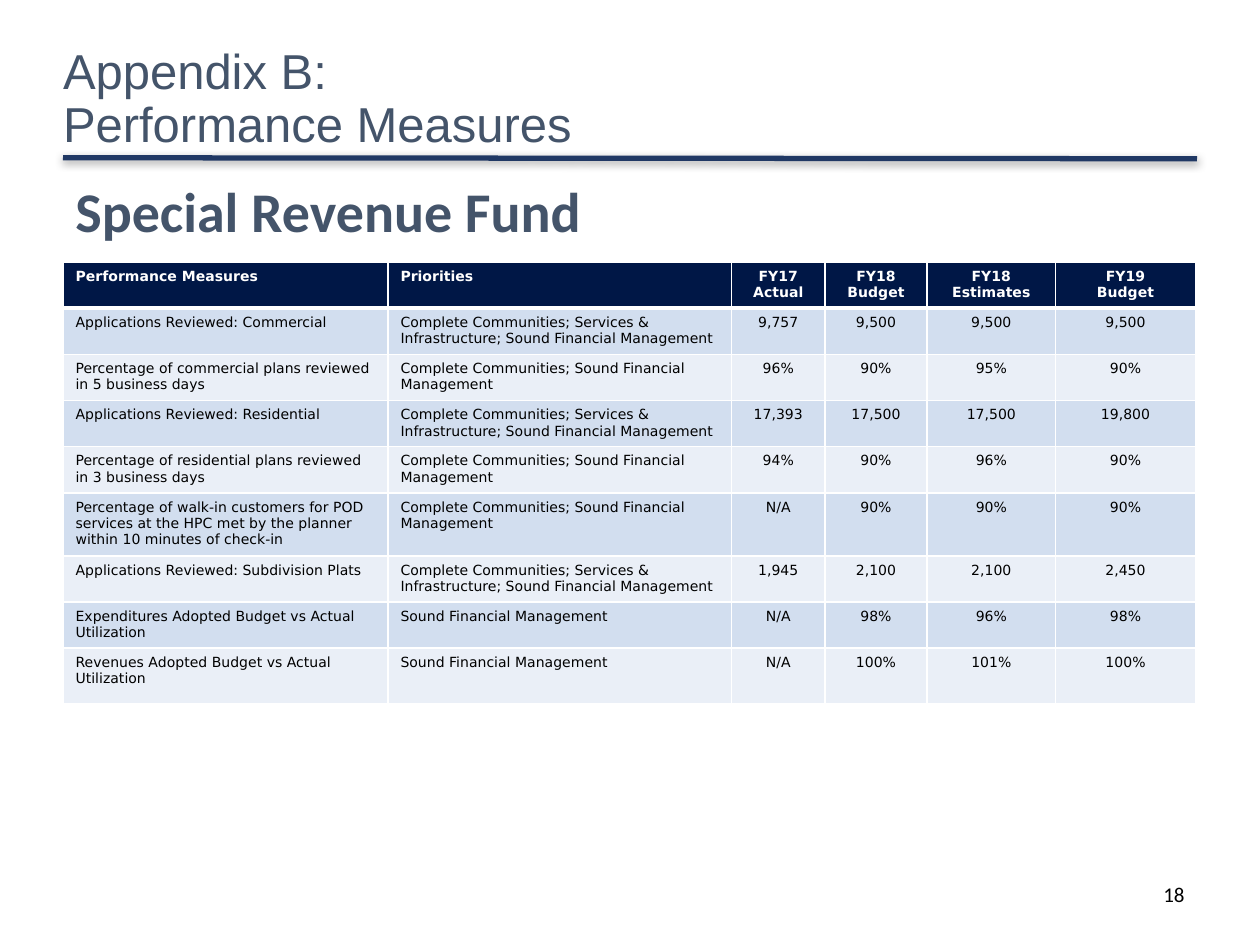
import pptx
import pptx.dml.color
import pptx.enum.shapes
import pptx.enum.text
import pptx.oxml
import pptx.oxml.ns
import pptx.util
from pptx.util import Cm

ALIGN = pptx.enum.text.PP_ALIGN
ANCHOR = pptx.enum.text.MSO_ANCHOR
NAVY, SLATE, WHITE, BLACK = "001746", "44546A", "FFFFFF", "000000"
BANDS = ("D2DEEF", "EAEFF7")
MARGIN, CONTENT_WIDTH = 1.27, 22.86

COLUMN_WIDTHS = (6.55, 6.93, 1.88, 2.06, 2.59, 2.82)
ROW_HEIGHTS = (0.91,) * 5 + (1.24,) + (0.91,) * 2 + (1.12,)
SOUND = "Sound Financial Management"
COMPLETE = "Complete Communities; " + SOUND
SERVICES = "Complete Communities; Services & Infrastructure; " + SOUND
MEASURES = (
    ("Performance Measures", "Priorities", "FY17\nActual", "FY18\nBudget", "FY18\nEstimates", "FY19\nBudget"),
    ("Applications Reviewed: Commercial", SERVICES, "9,757", "9,500", "9,500", "9,500"),
    ("Percentage of commercial plans reviewed in 5 business days", COMPLETE, "96%", "90%", "95%", "90%"),
    ("Applications Reviewed: Residential", SERVICES, "17,393", "17,500", "17,500", "19,800"),
    ("Percentage of residential plans reviewed in 3 business days", COMPLETE, "94%", "90%", "96%", "90%"),
    ("Percentage of walk-in customers for POD services at the HPC met by the planner within 10 minutes of check-in",
     COMPLETE, "N/A", "90%", "90%", "90%"),
    ("Applications Reviewed: Subdivision Plats", SERVICES, "1,945", "2,100", "2,100", "2,450"),
    ("Expenditures Adopted Budget vs Actual Utilization", SOUND, "N/A", "98%", "96%", "98%"),
    ("Revenues Adopted Budget vs Actual Utilization", SOUND, "N/A", "100%", "101%", "100%"),
)


def color(value):
    return pptx.dml.color.RGBColor.from_string(value)


def write_text(frame, text, font, size, fill, bold=False, align=ALIGN.LEFT, spacing=None):
    frame.text = text
    for paragraph in frame.paragraphs:
        paragraph.alignment = align
        if spacing:
            paragraph.line_spacing = spacing
        for run in paragraph.runs:
            run.font.name = font
            run.font.size = pptx.util.Pt(size)
            run.font.bold = bold
            run.font.color.rgb = color(fill)


def add_text(slide, left, top, width, height, text, wrap=True, **text_format):
    shape = slide.shapes.add_textbox(Cm(left), Cm(top), Cm(width), Cm(height))
    shape.text_frame.word_wrap = wrap
    write_text(shape.text_frame, text, **text_format)


def add_header(slide, left, top, width, height):
    title = slide.shapes.title
    title.left, title.top, title.width, title.height = Cm(left), Cm(top), Cm(17.42), Cm(height)
    frame = title.text_frame
    frame.margin_left = frame.margin_top = frame.margin_right = frame.margin_bottom = 0
    frame.vertical_anchor = ANCHOR.MIDDLE
    frame.auto_size = pptx.enum.text.MSO_AUTO_SIZE.NONE
    write_text(frame, "Appendix B:\vPerformance Measures", font="Arial", size=28, fill=SLATE, spacing=0.9)

    bottom = top + height
    rule = slide.shapes.add_connector(
        pptx.enum.shapes.MSO_CONNECTOR.STRAIGHT, Cm(left), Cm(bottom), Cm(left + width), Cm(bottom + 0.02))
    rule.line.color.rgb = color("203864")
    rule.line.width = pptx.util.Pt(3)
    rule._element.spPr.append(pptx.oxml.parse_xml(
        f'<a:effectLst {pptx.oxml.ns.nsdecls("a")}>'
        '<a:outerShdw blurRad="63500" dist="20320" dir="5400000" rotWithShape="0">'
        '<a:srgbClr val="000000"><a:alpha val="38000"/></a:srgbClr>'
        '</a:outerShdw></a:effectLst>'))


def set_borders(cell, widths):
    properties = cell._tc.get_or_add_tcPr()
    for side, width in widths.items():
        properties.append(pptx.oxml.parse_xml(
            f'<a:ln{side} {pptx.oxml.ns.nsdecls("a")} w="{pptx.util.Pt(width)}">'
            f'<a:solidFill><a:srgbClr val="{WHITE}"/></a:solidFill></a:ln{side}>'))


def add_measures_table(slide, left, top, width, height):
    table = slide.shapes.add_table(
        len(MEASURES), len(COLUMN_WIDTHS), Cm(left), Cm(top), Cm(width), Cm(height)).table
    for column, column_width in zip(table.columns, COLUMN_WIDTHS):
        column.width = Cm(column_width)
    for row_index, (row, row_height, texts) in enumerate(zip(table.rows, ROW_HEIGHTS, MEASURES)):
        row.height = Cm(row_height)
        header = row_index == 0
        for column_index, (cell, text) in enumerate(zip(row.cells, texts)):
            set_borders(cell, {"L": 1, "R": 1, "T": 3 if row_index == 1 else 1, "B": 3 if header else 1})
            cell.fill.solid()
            cell.fill.fore_color.rgb = color(NAVY if header else BANDS[(row_index - 1) % 2])
            write_text(cell.text_frame, text, font="DejaVu Sans", size=8, bold=header,
                       fill=WHITE if header else BLACK,
                       align=ALIGN.CENTER if column_index > 1 else ALIGN.LEFT)


def main():
    presentation = pptx.Presentation()
    presentation.slide_width, presentation.slide_height = Cm(25.4), Cm(19.05)
    slide = presentation.slides.add_slide(presentation.slide_layouts.get_by_name("Title Only"))
    add_header(slide, MARGIN, 0.84, CONTENT_WIDTH, 2.34)
    add_text(slide, MARGIN, 3.43, 10.8, 1.63, "Special Revenue Fund", wrap=False,
             font="Calibri", size=32, fill=SLATE, bold=True)
    add_measures_table(slide, MARGIN, 5.28, CONTENT_WIDTH, sum(ROW_HEIGHTS))
    add_text(slide, 18.21, 17.65, 5.92, 1.02, "18",
             font="Calibri", size=12, fill=BLACK, align=ALIGN.RIGHT)
    presentation.save("out.pptx")


if __name__ == "__main__":
    main()
